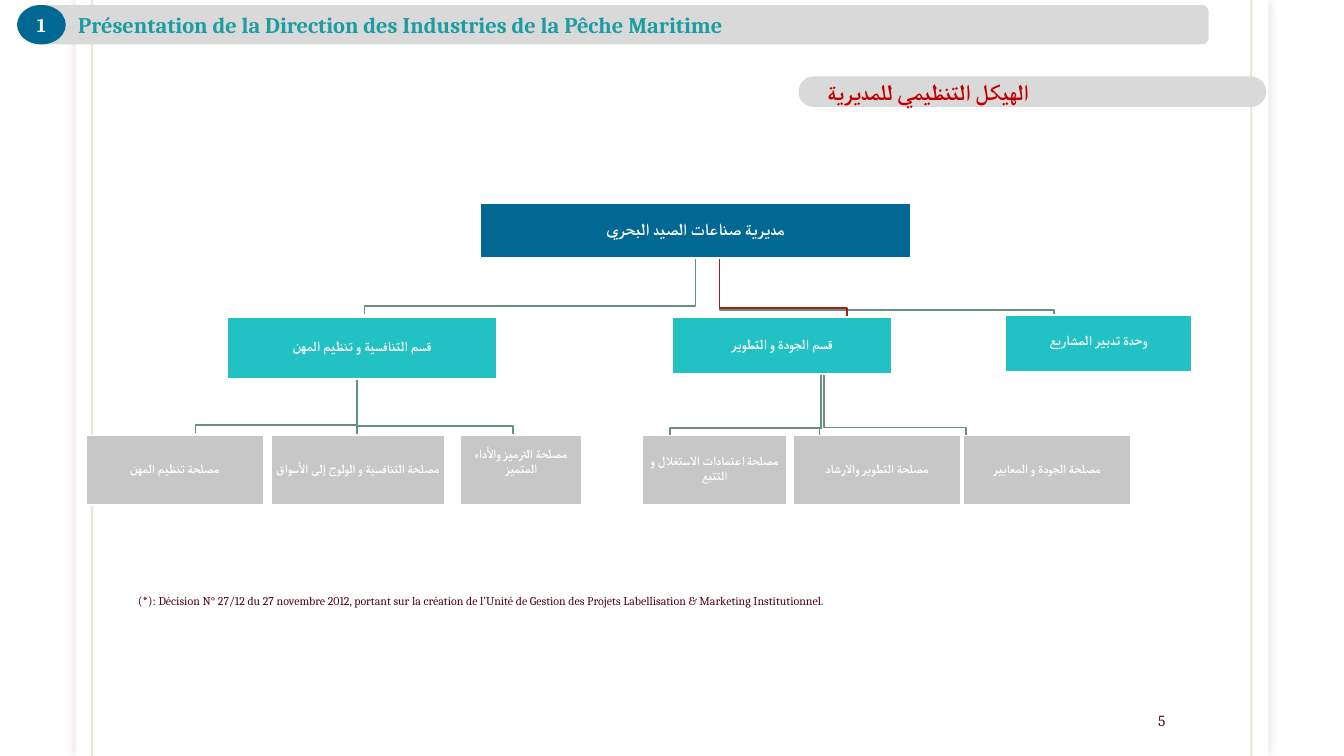
from dataclasses import dataclass

from lxml import etree
from pptx import Presentation
from pptx.dml.color import RGBColor
from pptx.enum.shapes import MSO_SHAPE
from pptx.enum.text import MSO_ANCHOR, PP_ALIGN
from pptx.oxml import parse_xml
from pptx.oxml.ns import nsdecls, qn
from pptx.util import Pt

RECT, ROUND, OVAL = MSO_SHAPE.RECTANGLE, MSO_SHAPE.ROUNDED_RECTANGLE, MSO_SHAPE.OVAL
BAR = MSO_SHAPE.FLOWCHART_ALTERNATE_PROCESS
LEFT, CENTER, RIGHT = PP_ALIGN.LEFT, PP_ALIGN.CENTER, PP_ALIGN.RIGHT
TOP, MIDDLE = MSO_ANCHOR.TOP, MSO_ANCHOR.MIDDLE

FONT = "Cambria"
COLORS = {
    "white": "FFFFFF", "blue": "006892", "turquoise": "22C2C4", "grey": "C7C7C7",
    "bar": "D9D9D9", "title": "1C9DA0", "heading": "C00000", "text": "4D0511",
    "green": "67917D", "red": "A22218", "rule": "79540B", "shadow": "65150F",
}


@dataclass
class Level:
    fill: str
    size: float


@dataclass
class Unit:
    text: str
    level: Level
    left: float
    top: float
    width: float
    height: float
    rtl: bool = True
    bottom_inset: float = 3.6
    spacing: float = 1.0


@dataclass
class Branch:
    x: float
    top: float
    bend: float
    end_x: float
    bottom: float
    color: str = "green"


DIRECTION, DIVISION, SERVICE = Level("blue", 12), Level("turquoise", 10), Level("grey", 9)
ROW_TOP, ROW_HEIGHT = 311, 49.7


def service(text: str, left: float, width: float, **options) -> Unit:
    return Unit(text, SERVICE, left, ROW_TOP, width, ROW_HEIGHT, **options)


UNITS = [
    Unit("مديرية صناعات الصيد البحري", DIRECTION, 342.9, 145.4, 307.6, 38.9),
    Unit("قسم التنافسية و تنظيم المهن", DIVISION, 162.5, 226.8, 192.4, 43.9, rtl=False),
    Unit("قسم الجودة و التطوير", DIVISION, 479.9, 226.8, 157.3, 40.3, rtl=False),
    Unit("وحدة تدبير المشاريع", DIVISION, 717.9, 225, 133.2, 40.5, spacing=0.9),
    service("مصلحة تنظيم المهن", 61.4, 126.7),
    service("مصلحة التنافسية و الولوج إلى الأسواق", 193.7, 123.8),
    service("مصلحة الترميز والأداء المتميز", 329, 86.4, rtl=False, bottom_inset=14),
    service("مصلحة اعتمادات الاستغلال و التتبع", 458.8, 103.2),
    service("مصلحة التطوير والارشاد", 566.6, 119.6),
    service("مصلحة الجودة و المعايير", 687.8, 120),
]

BRANCHES = [
    Branch(514, 184.3, 221.4, 753, 225),
    Branch(588.6, 268, 305.4, 690, 310.7),
    Branch(587, 268, 305.7, 585.4, 310.7),
    Branch(586.4, 268, 305.7, 478.6, 310.7),
    Branch(514, 184.3, 220, 605, 225.7, "red"),
    Branch(255, 270.7, 304.3, 366.4, 310),
    Branch(255, 270.7, 304.3, 255, 310),
    Branch(255, 270.7, 303.6, 139.6, 309.3),
    Branch(496.8, 184.3, 218.6, 260.4, 224.3),
]


def rgb(name: str) -> RGBColor:
    return RGBColor.from_string(COLORS[name])


def set_frame(tf, insets: tuple = (7.2, 3.6, 7.2, 3.6), anchor=MIDDLE) -> None:
    tf.word_wrap = True
    tf.vertical_anchor = anchor
    tf.margin_left, tf.margin_top, tf.margin_right, tf.margin_bottom = map(Pt, insets)


def add_run(p, text: str, size: float, color: str, bold: bool = False) -> None:
    r = p.add_run()
    r.text = text
    r.font.name, r.font.size, r.font.bold = FONT, Pt(size), bold
    r.font.color.rgb = rgb(color)
    etree.SubElement(r._r.get_or_add_rPr(), qn("a:cs")).set("typeface", FONT)


def add_box(s, kind, left: float, top: float, width: float, height: float, fill: str):
    sp = s.shapes.add_shape(kind, Pt(left), Pt(top), Pt(width), Pt(height))
    sp.shadow.inherit = False
    sp.fill.solid()
    sp.fill.fore_color.rgb = rgb(fill)
    sp.line.fill.background()
    return sp


def add_textbox(s, left: float, top: float, width: float, height: float, anchor, align):
    tf = s.shapes.add_textbox(Pt(left), Pt(top), Pt(width), Pt(height)).text_frame
    set_frame(tf, anchor=anchor)
    p = tf.paragraphs[0]
    p.alignment = align
    return p


def add_side_rule(s, x: float) -> None:
    line = s.shapes.add_connector(1, Pt(x), 0, Pt(x), Pt(540))
    line.line.width = Pt(1.5)
    line.line.color.rgb = rgb("rule")
    color = line._element.spPr.find(".//" + qn("a:srgbClr"))
    etree.SubElement(color, qn("a:alpha")).set("val", "15000")
    etree.SubElement(line._element.spPr, qn("a:effectLst"))


def add_branch(s, b: Branch) -> None:
    path = s.shapes.build_freeform(Pt(b.x), Pt(b.top))
    points = [(b.x, b.bend), (b.end_x, b.bend), (b.end_x, b.bottom)]
    path.add_line_segments([(Pt(x), Pt(y)) for x, y in points], close=False)
    sp = path.convert_to_shape()
    sp.shadow.inherit = False
    sp.fill.background()
    sp.line.width = Pt(1)
    sp.line.color.rgb = rgb(b.color)


def add_unit(s, u: Unit) -> None:
    sp = add_box(s, RECT, u.left, u.top, u.width, u.height, u.level.fill)
    sp.line.width = Pt(1)
    sp.line.color.rgb = rgb("white")
    set_frame(sp.text_frame, (0.7, 0.7, 0.7, u.bottom_inset))
    p = sp.text_frame.paragraphs[0]
    p.alignment = CENTER
    p.line_spacing = u.spacing
    if u.rtl:
        p._p.get_or_add_pPr().set("rtl", "1")
    add_run(p, u.text, u.level.size, "white", True)


def main() -> None:
    prs = Presentation()
    prs.slide_width, prs.slide_height = Pt(960), Pt(540)
    s = prs.slides.add_slide(prs.slide_layouts[5])

    # Page panel with soft shadow and side rules
    panel = add_box(s, RECT, 54, 0, 852, 540, "white")
    panel._element.spPr.find(qn("a:effectLst")).append(parse_xml(
        f'<a:outerShdw {nsdecls("a")} blurRad="{Pt(7)}" dist="0" dir="0" algn="ctr" rotWithShape="0">'
        f'<a:srgbClr val="{COLORS["shadow"]}"><a:alpha val="15000"/></a:srgbClr></a:outerShdw>'))
    for x in (65.8, 893.8):
        add_side_rule(s, x)

    # Organisation chart
    for branch in BRANCHES:
        add_branch(s, branch)
    for unit in UNITS:
        add_unit(s, unit)

    # Section heading
    heading = add_box(s, ROUND, 570.4, 54.6, 334, 21.8, "bar")
    heading.adjustments[0] = 0.5
    set_frame(heading.text_frame, (17.5, 2.9, 5.8, 2.9))
    p = heading.text_frame.paragraphs[0]
    p.alignment = LEFT
    add_run(p, "الهيكل التنظيمي للمديرية", 16, "heading", True)

    # Footnote
    p = add_textbox(s, 91.4, 419.8, 537, 36, TOP, LEFT)
    add_run(p, "(*): ", 8.9, "text")
    add_run(p, "Décision N° 27/12 du 27 novembre 2012, portant sur la création de l’Unité de "
               "Gestion des Projets Labellisation & Marketing Institutionnel.", 8.5, "text")

    # Title on its bar, with the section number
    add_box(s, BAR, 19.4, 3.6, 844, 28.1, "bar")
    title = s.shapes.title
    title.left, title.top, title.width, title.height = Pt(19.4), Pt(3.6), Pt(844), Pt(28.1)
    s.shapes._spTree.append(title._element)
    set_frame(title.text_frame, (36.4, 3.6, 7.2, 3.6))
    p = title.text_frame.paragraphs[0]
    p.alignment = LEFT
    add_run(p, "Présentation de la Direction des Industries de la Pêche Maritime", 16, "title", True)

    badge = add_box(s, OVAL, 12.2, 3.6, 34.8, 28.1, "blue")
    set_frame(badge.text_frame, (0, 0, 0, 0))
    p = badge.text_frame.paragraphs[0]
    p.alignment = CENTER
    add_run(p, "1", 14, "white", True)

    # Page number
    p = add_textbox(s, 767.5, 504, 72, 21.6, MIDDLE, RIGHT)
    add_run(p, "5", 11, "text")

    prs.save("out.pptx")


if __name__ == "__main__":
    main()
